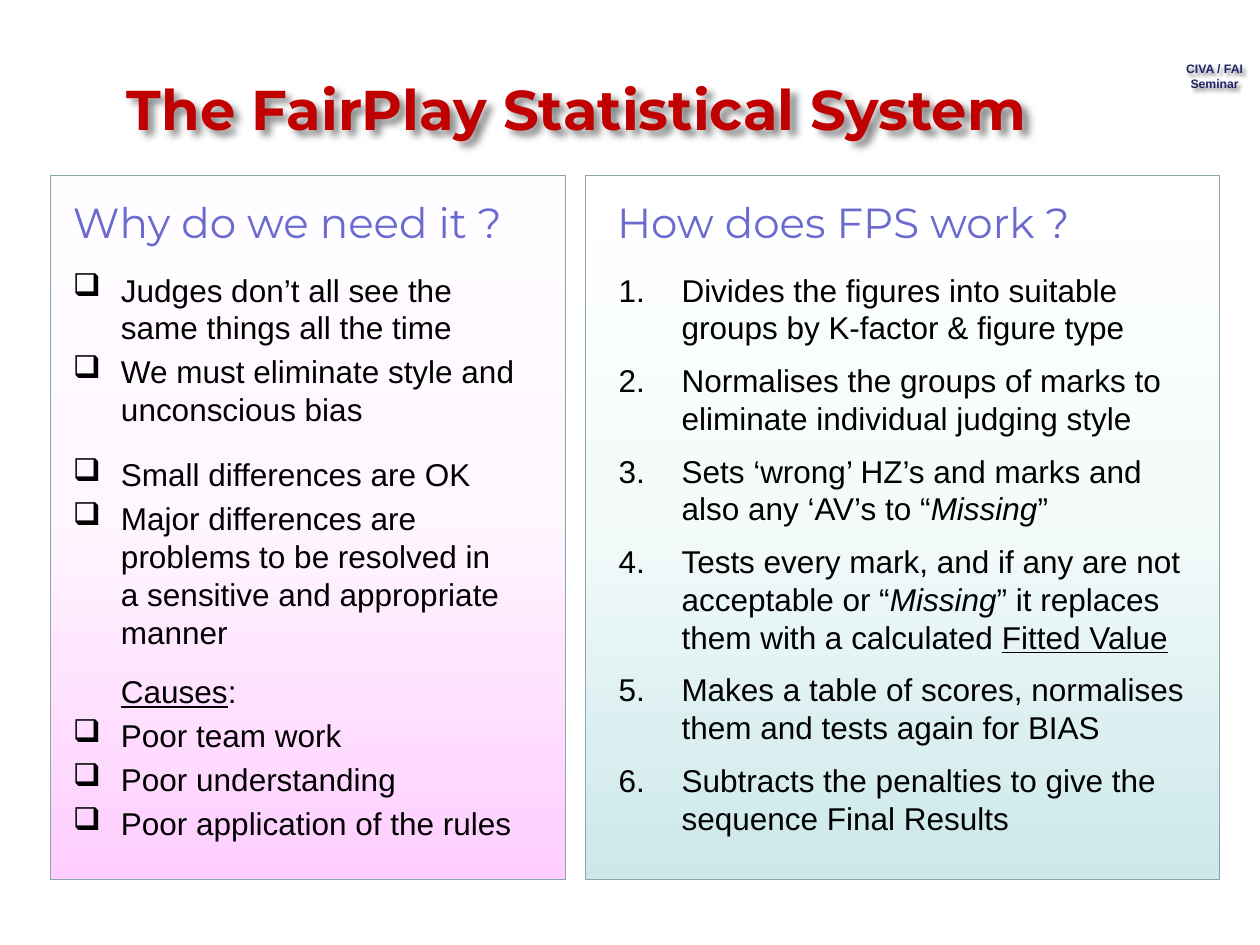
"""Build the FairPlay Statistical System slide."""
from dataclasses import dataclass

from pptx import Presentation
from pptx import util as u
from pptx.dml.color import RGBColor
from pptx.enum import shapes, text
from pptx.oxml import parse_xml
from pptx.oxml.ns import nsdecls


@dataclass(frozen=True)
class Theme:
    """Colours, fonts and type sizes."""
    ink: str = "000000"
    heading: str = "6B6BCF"
    tag: str = "222267"
    border: str = "8AA6A8"
    pink: tuple = ((0, "FFCDFF"), (53, "FFF7FF"), (100, "FFFDFF"))
    teal: tuple = ((0, "CCE8EA"), (53, "F5FBFB"), (100, "FFFFFF"))
    red: tuple = ((0, "820000"), (50, "C00000"), (100, "FF0000"))
    body_font: str = "Arial"
    display_font: str = "Montserrat"
    title_size: float = 32
    heading_size: float = 24
    body_size: float = 18
    tag_size: float = 7


def gradient(stops):
    """Return a gradient fill that runs from bottom to top."""
    marks = "".join(f'<a:gs pos="{place * 1000}"><a:srgbClr val="{colour}"/></a:gs>'
                    for place, colour in stops)
    return parse_xml(f'<a:gradFill {nsdecls("a")}><a:gsLst>{marks}</a:gsLst>'
                     '<a:lin ang="16200000" scaled="0"/></a:gradFill>')


def add_span(para, words, font, size, colour, bold=None, italic=None, underline=None):
    """Add a run of text; a tuple of stops as colour gives a gradient."""
    span = para.add_run()
    span.text = words
    face = span.font
    face.name, face.size = font, u.Pt(size)
    face.bold, face.italic, face.underline = bold, italic, underline
    if isinstance(colour, tuple):
        span._r.get_or_add_rPr().insert(0, gradient(colour))
    else:
        face.color.rgb = RGBColor.from_string(colour)


class SlideBuilder:
    """Hold the theme and the current slide."""

    def __init__(self, page, theme):
        """Remember the slide and its theme."""
        self.page, self.theme = page, theme

    def panel(self, left, width, stops):
        """Add a bordered gradient panel."""
        box = self.page.shapes.add_shape(
            shapes.MSO_SHAPE.RECTANGLE, u.Cm(left), u.Cm(3.53), u.Cm(width), u.Cm(14.2))
        box._element.spPr.insert(2, gradient(stops))
        box.line.color.rgb = RGBColor.from_string(self.theme.border)
        box.line.width = u.Pt(0.5)
        box.shadow.inherit = False

    def frame(self, left, top, width, height, wrap=True, shadow=0):
        """Add an empty text box, with a soft shadow of the given distance in points."""
        box = self.page.shapes.add_textbox(u.Cm(left), u.Cm(top), u.Cm(width), u.Cm(height))
        box.text_frame.word_wrap = wrap
        if shadow:
            distance = u.Pt(shadow)
            box._element.spPr.append(parse_xml(
                f'<a:effectLst {nsdecls("a")}><a:outerShdw blurRad="{distance}" '
                f'dist="{distance}" dir="2700000" algn="tl"><a:srgbClr val="000000">'
                '<a:alpha val="45000"/></a:srgbClr></a:outerShdw></a:effectLst>'))
        return box.text_frame

    def title(self, words):
        """Add the slide title."""
        frame = self.frame(2.31, 1.37, 20.7, 1.9, shadow=4)
        add_span(frame.paragraphs[0], words, self.theme.display_font,
                 self.theme.title_size, self.theme.red, bold=True)

    def tag(self, lines):
        """Add the centred corner label."""
        frame = self.frame(23.62, 1.12, 1.73, 0.86, wrap=False, shadow=2)
        for index, words in enumerate(lines):
            para = frame.add_paragraph() if index else frame.paragraphs[0]
            para.alignment = text.PP_ALIGN.CENTER
            add_span(para, words, self.theme.body_font, self.theme.tag_size,
                     self.theme.tag, bold=True)

    def heading(self, left, words):
        """Add a panel heading."""
        frame = self.frame(left, 3.33, 11.23, 1.78)
        frame.vertical_anchor = text.MSO_ANCHOR.BOTTOM
        add_span(frame.paragraphs[0], words, self.theme.display_font,
                 self.theme.heading_size, self.theme.heading)

    def items(self, left, width, height, indent, marker, entries):
        """Add a list of (space before, spans, has marker) entries."""
        frame = self.frame(left, 5.33, width, height)
        for index, (space, spans, marked) in enumerate(entries):
            para = frame.add_paragraph() if index else frame.paragraphs[0]
            layout = para._p.get_or_add_pPr()
            layout.set("marL", str(u.Cm(indent)))
            layout.set("indent", str(-u.Cm(indent) if marked else 0))
            layout.append(parse_xml(
                f'<a:{marker if marked else "buNone"} {nsdecls("a")}/>'))
            para.space_before = u.Pt(space if index else 0)
            for words, style in spans:
                add_span(para, words, self.theme.body_font, self.theme.body_size,
                         self.theme.ink, **style)


PLAIN, ITALIC, UNDERLINE = {}, {"italic": True}, {"underline": True}

REASONS = [
    (0, [("Judges don’t all see the same things all the time", PLAIN)], True),
    (3.6, [("We must eliminate style and unconscious bias", PLAIN)], True),
    (15.6, [("Small differences are OK", PLAIN)], True),
    (3.6, [("Major differences are problems to be resolved in "
            "a sensitive and appropriate manner", PLAIN)], True),
    (12, [("Causes", UNDERLINE), (":", PLAIN)], False),
    (3.6, [("Poor team work", PLAIN)], True),
    (3.6, [("Poor understanding", PLAIN)], True),
    (3.6, [("Poor application of the rules", PLAIN)], True),
]

STEPS = [
    [("Divides the figures into suitable groups by K-factor & figure type", PLAIN)],
    [("Normalises the groups of marks to eliminate individual judging style", PLAIN)],
    [("Sets ‘wrong’ HZ’s and marks and also any ‘AV’s to “", PLAIN),
     ("Missing", ITALIC), ("”", PLAIN)],
    [("Tests every mark, and if any are not acceptable or “", PLAIN),
     ("Missing", ITALIC), ("” it replaces them with a calculated ", PLAIN),
     ("Fitted Value", UNDERLINE)],
    [("Makes a table of scores, normalises them and tests again for BIAS", PLAIN)],
    [("Subtracts the penalties to give the sequence Final Results", PLAIN)],
]


def main():
    """Build and save the deck."""
    deck = Presentation()
    deck.slide_width, deck.slide_height = u.Cm(25.4), u.Cm(19.05)
    theme = Theme()
    builder = SlideBuilder(deck.slides.add_slide(deck.slide_layouts[6]), theme)
    builder.tag(["CIVA / FAI", "Seminar"])
    builder.panel(11.81, 12.78, theme.teal)
    builder.panel(1.02, 10.39, theme.pink)
    builder.heading(1.22, "Why do we need it ?")
    builder.items(1.22, 9.42, 12.8, 0.97, 'buChar char="❑"', REASONS)
    builder.heading(12.19, "How does FPS work ?")
    builder.items(12.22, 12.27, 11.99, 1.27, 'buAutoNum type="arabicPeriod"',
                  [(8.5, spans, True) for spans in STEPS])
    builder.title("The FairPlay Statistical System")
    deck.save("out.pptx")


if __name__ == "__main__":
    main()
